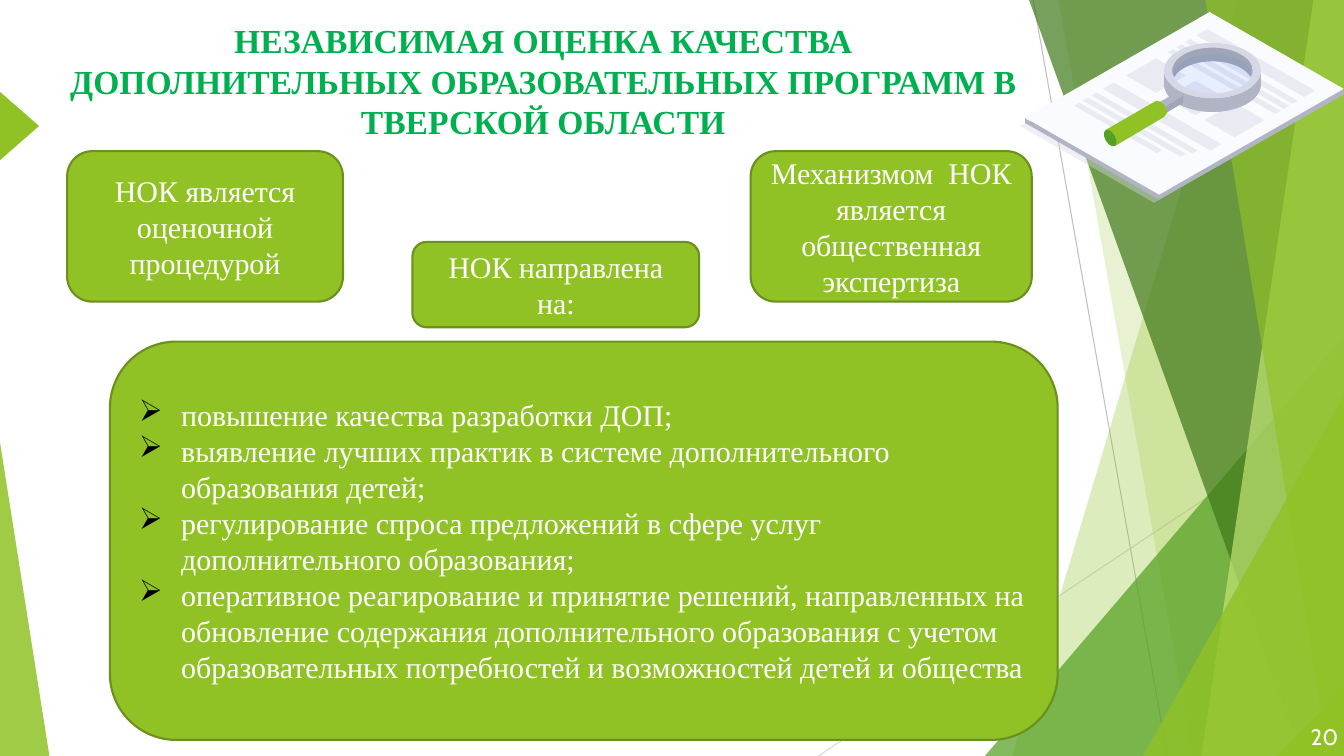
from collections import namedtuple
from math import cos, radians, sin

from lxml import etree
from pptx import Presentation
from pptx.dml.color import RGBColor
from pptx.enum.shapes import MSO_CONNECTOR, MSO_SHAPE
from pptx.enum.text import MSO_ANCHOR, MSO_AUTO_SIZE, PP_ALIGN
from pptx.oxml.ns import qn
from pptx.util import Pt

STRAIGHT = MSO_CONNECTOR.STRAIGHT
TRIANGLE, RIGHT_TRIANGLE = MSO_SHAPE.ISOSCELES_TRIANGLE, MSO_SHAPE.RIGHT_TRIANGLE
ROUNDED, OVAL = MSO_SHAPE.ROUNDED_RECTANGLE, MSO_SHAPE.OVAL
TOP, MIDDLE, BOTTOM = MSO_ANCHOR.TOP, MSO_ANCHOR.MIDDLE, MSO_ANCHOR.BOTTOM
LEFT, CENTER, RIGHT = PP_ALIGN.LEFT, PP_ALIGN.CENTER, PP_ALIGN.RIGHT
NO_AUTOFIT = MSO_AUTO_SIZE.NONE

WHITE = RGBColor(0xFF, 0xFF, 0xFF)
LIME = RGBColor(0x90, 0xC2, 0x26)
LIME_EDGE = RGBColor(0x6B, 0x90, 0x1C)
PALE_LIME = RGBColor(0xC0, 0xE4, 0x74)
GREEN = RGBColor(0x54, 0xA0, 0x21)
DARK_GREEN = RGBColor(0x3F, 0x78, 0x19)
TITLE_GREEN = RGBColor(0x00, 0xB0, 0x50)
GREY = RGBColor(0xBF, 0xBF, 0xBF)
PALE_GREY = RGBColor(0xD9, 0xD9, 0xD9)
PAPER = RGBColor(0xFA, 0xFB, 0xFF)
PRINT = RGBColor(0xE9, 0xEA, 0xF2)
SILVER = RGBColor(0xD6, 0xD8, 0xE5)
STEEL = RGBColor(0xB1, 0xB4, 0xC4)
DARK_STEEL = RGBColor(0xA1, 0xA5, 0xB5)
GLASS = RGBColor(0x3E, 0x7E, 0xFF)

SERIF = "Times New Roman"
ISO_SLOPE = 0.573
Box = namedtuple("Box", "left top width height")

TITLE = ("НЕЗАВИСИМАЯ ОЦЕНКА КАЧЕСТВА ДОПОЛНИТЕЛЬНЫХ ОБРАЗОВАТЕЛЬНЫХ "
         "ПРОГРАММ В ТВЕРСКОЙ ОБЛАСТИ")
GOALS = [
    "повышение качества разработки ДОП;",
    "выявление лучших практик в системе дополнительного образования детей;",
    "регулирование спроса предложений в сфере услуг дополнительного образования;",
    "оперативное реагирование и принятие решений, направленных на обновление "
    "содержания дополнительного образования с учетом образовательных "
    "потребностей и возможностей детей и общества",
]
CARDS = [
    (Box(48, 108, 197, 107.5), ["НОК является оценочной процедурой"], False),
    (Box(536.2, 108, 200.8, 107.5),
     ["Механизмом  НОК является общественная экспертиза"], False),
    (Box(78.5, 244, 677, 284.5), GOALS, True),
    (Box(294.6, 172.8, 204.8, 61), ["НОК направлена на:"], False),
]


def paint(shape, color, opacity=100):
    """Fill a shape without outline or shadow."""
    shape.shadow.inherit = False
    shape.line.fill.background()
    shape.fill.solid()
    shape.fill.fore_color.rgb = color
    if opacity < 100:
        tint = shape.fill._xPr.find(".//" + qn("a:srgbClr"))
        etree.SubElement(tint, qn("a:alpha"), val=str(opacity * 1000))


def add_preset(slide, kind, box, color, opacity=100):
    """Add a painted preset shape."""
    shape = slide.shapes.add_shape(kind, *map(Pt, box))
    paint(shape, color, opacity)
    return shape


def add_outline(slide, box, color, *contours, opacity=100):
    """Add a painted freeform whose contours are relative to the box."""
    placed = [[(Pt(box.left + x), Pt(box.top + y)) for x, y in contour]
              for contour in contours]
    builder = slide.shapes.build_freeform(*placed[0][0])
    for contour in placed:
        builder.move_to(*contour[0])
        builder.add_line_segments(contour[1:], close=True)
    paint(builder.convert_to_shape(), color, opacity)


def arc(x, y, rx, ry, start=0, end=360):
    """Return points along an elliptical arc."""
    angles = [radians(start + (end - start) * i / 40) for i in range(41)]
    return [(x + rx * cos(a), y + ry * sin(a)) for a in angles]


def iso(x, y, right, left):
    """Return an isometric rectangle that hangs from its top corner."""
    return [(x, y), (x + right, y + ISO_SLOPE * right),
            (x + right - left, y + ISO_SLOPE * (right + left)),
            (x - left, y + ISO_SLOPE * left)]


def add_backdrop(slide, box):
    """Draw the thin lines and the translucent facets."""
    right, bottom = box.width, box.height

    def line(x1, y1, x2, y2, color):
        ends = (box.left + x1, box.top + y1, box.left + x2, box.top + y2)
        thread = slide.shapes.add_connector(STRAIGHT, *map(Pt, ends))
        thread.line.color.rgb = color
        thread.line.width = Pt(0.75)
        etree.SubElement(thread._element.spPr, qn("a:effectLst"))

    def facet(top_x, bottom_x, color, opacity):
        add_outline(slide, box, color, [(top_x, 0), (right, 0), (right, bottom),
                                        (bottom_x, bottom)], opacity=opacity)

    def corner(x, width, height, apex, color, opacity):
        place = Box(box.left + x, box.top + bottom - height, width, height)
        wedge = add_preset(slide, TRIANGLE, place, color, opacity)
        wedge.adjustments[0] = apex

    line(738, 0, 833.8, bottom, GREY)
    line(right, 290.2, 584.6, bottom, PALE_GREY)
    facet(884.2, 722.9, LIME, 30)
    facet(756, 851.8, LIME, 20)
    corner(703.5, 256.5, 300, 1, GREEN, 72)
    facet(735.1, 929.5, DARK_GREEN, 70)
    facet(938.2, 858.2, PALE_LIME, 70)
    facet(861.1, 949, LIME, 65)
    corner(816.5, 143.5, 257, 1, LIME, 80)
    corner(0, 35.3, 224, 0, LIME, 85)
    fold = add_preset(slide, RIGHT_TRIANGLE, Box(box.left + 912, box.top + 491, 49, 49), LIME)
    fold._element.spPr.find(qn("a:xfrm")).set("flipH", "1")
    marker = add_preset(slide, TRIANGLE, Box(box.left - 10.6, box.top + 76, 49, 28), LIME)
    marker.rotation = 90


def add_document(slide, box):
    """Draw the isometric sheet with its printed lines."""
    def draw(color, contour, opacity=100):
        add_outline(slide, box, color, contour, opacity=opacity)

    draw(SILVER, iso(131.8, 5.8, 95.8, 131.8), 40)
    draw(STEEL, [(228.2, 56.9), (135.4, 3.6), (6.5, 77.8), (3.6, 75.6), (3.6, 79.2),
                 (99.4, 133.9), (231.1, 59), (231.1, 55.4)])
    draw(PAPER, iso(135.4, 0, 95.8, 131.8))
    for x, y, lengths in ((133.9, 12.2, (76.8, 76.8, 76.8)), (67, 50.4, (72, 70, 59))):
        draw(PRINT, iso(x, y, 76.8, 7.8))
        for row, length in enumerate(lengths):
            draw(PRINT, iso(x - 12.2 - 6.2 * row, y + 7.2 + 3.6 * row, length, 3.7))
    for column in range(3):
        draw(PRINT, iso(97.2 + 28 * column, 33.1 + 15.9 * column, 21.4, 21.4))


def add_magnifier(slide, box):
    """Draw the magnifying glass that lies on the sheet."""
    x, upper, lower = 137.5, 41.8, 51.5
    rim, hole = (34.6, 19.8), (28.8, 16.4)

    def draw(color, *contours, opacity=100):
        add_outline(slide, box, color, *contours, opacity=opacity)

    draw(STEEL, arc(x, lower, *rim), arc(x, lower, *hole, 360, 0))
    draw(DARK_STEEL, arc(x, lower, *hole, 200, 340)
         + [(166.3, 35.3), (149, 25.2), (123.8, 24.5), (110.9, 31.7), (106.6, 41)])
    draw(GLASS, arc(x, 46.4, 28.8, 16.2), opacity=10)
    draw(STEEL, arc(x, lower, *rim, 0, 180) + arc(x, upper, *rim, 180, 0))
    draw(SILVER, arc(x, upper, *rim), arc(x, upper, *hole, 360, 0))
    draw(STEEL, [(116.6, 59.8), (102.2, 68.4), (97.2, 65.5), (112.3, 57.6)])
    draw(DARK_STEEL, [(116.6, 64.8), (102.2, 73.4), (102.2, 68.4), (116.6, 59.8)])
    draw(LIME, [(105.1, 72), (103.7, 67), (100.1, 64.1), (97.2, 63.4), (61.2, 84.2),
                (67.7, 95.8), (103, 74.9)])
    tip = add_preset(slide, OVAL, Box(box.left + 60.8, box.top + 83.5, 7.2, 13), GREEN)
    tip.rotation = 330


def add_bullet(paragraph):
    """Give a paragraph a hanging black arrow bullet."""
    properties = paragraph._p.get_or_add_pPr()
    properties.set("marL", str(Pt(30)))
    properties.set("indent", str(Pt(-30)))
    tint = etree.SubElement(properties, qn("a:buClr"))
    etree.SubElement(tint, qn("a:srgbClr"), val="000000")
    etree.SubElement(properties, qn("a:buChar"), char="➢")


def write(shape, lines, size, color, align, anchor, face=SERIF, bold=False, bullets=False):
    """Write formatted paragraphs into a shape."""
    frame = shape.text_frame
    frame.word_wrap = True
    frame.auto_size = NO_AUTOFIT
    frame.vertical_anchor = anchor
    frame.text = "\n".join(lines)
    for paragraph in frame.paragraphs:
        if bullets:
            add_bullet(paragraph)
        paragraph.alignment = align
        font = paragraph.font
        font.name, font.size, font.bold = face, Pt(size), bold
        font.color.rgb = color


def clear_margins(shape):
    """Remove the inner margins of a text shape."""
    frame = shape.text_frame
    frame.margin_left = frame.margin_top = frame.margin_right = frame.margin_bottom = 0


def add_title(slide, box):
    """Place and format the title placeholder."""
    title = slide.shapes.title
    title.left, title.top, title.width, title.height = map(Pt, box)
    clear_margins(title)
    write(title, [TITLE], 24, TITLE_GREEN, CENTER, TOP, bold=True)


def add_page_number(slide, box):
    """Place the page number."""
    number = slide.shapes.add_textbox(*map(Pt, box))
    clear_margins(number)
    write(number, ["20"], 16, WHITE, RIGHT, BOTTOM, face="Cabin")


def add_card(slide, box, lines, bullets):
    """Add a rounded green card with centred or bulleted text."""
    card = add_preset(slide, ROUNDED, box, LIME)
    card.line.color.rgb = LIME_EDGE
    card.line.width = Pt(1.5)
    write(card, lines, 21.4, WHITE, LEFT if bullets else CENTER, MIDDLE, bullets=bullets)


def main():
    """Build the slide and save it."""
    deck = Presentation()
    deck.slide_width, deck.slide_height = Pt(960), Pt(540)
    slide = deck.slides.add_slide(deck.slide_layouts[5])
    add_backdrop(slide, Box(0, 0, 960, 540))
    add_title(slide, Box(40.3, 14.4, 695.5, 90))
    add_page_number(slide, Box(908, 486.7, 48, 49))
    illustration = Box(728.6, 8.6, 231.4, 136)
    add_document(slide, illustration)
    add_magnifier(slide, illustration)
    for box, lines, bullets in CARDS:
        add_card(slide, box, lines, bullets)
    deck.save("out.pptx")


if __name__ == "__main__":
    main()
